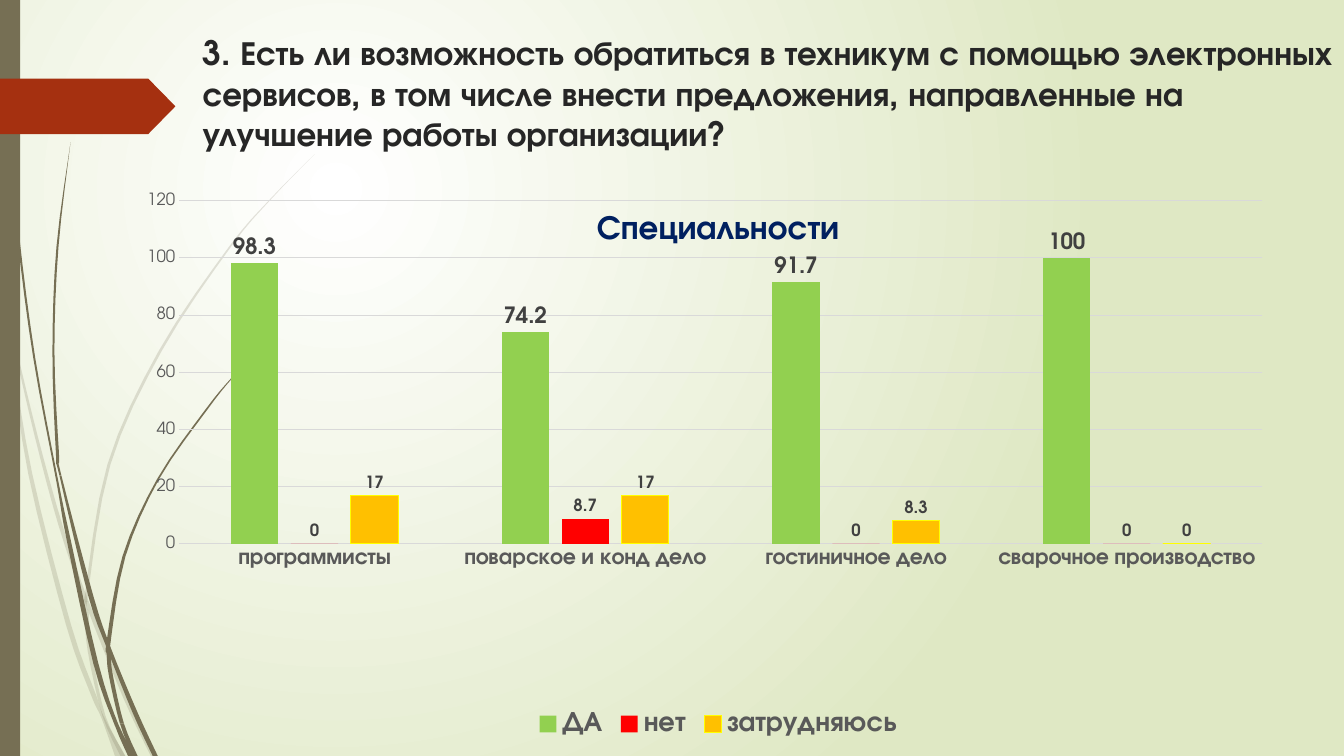
import lxml.etree
import pptx
import pptx.chart.data
import pptx.dml.color
import pptx.enum.chart
import pptx.enum.shapes
import pptx.enum.text
import pptx.oxml
import pptx.oxml.ns
import pptx.util

Inches, Pt = pptx.util.Inches, pptx.util.Pt
qn = pptx.oxml.ns.qn
FONT = "TeX Gyre Adventor"
COLORS = {
    "white": "FFFFFF", "lime": "DFE8C4", "olive": "766F54", "rust": "A53010",
    "title": "262626", "navy": "002060", "axis": "595959", "grid": "D9D9D9",
    "label": "404040", "green": "92D050", "red": "FF0000", "amber": "FFC000",
    "yellow": "FFFF00",
}
STEPS = 4  # samples between two wisp points
# Each wisp: indices of the points where a new blade starts,
# then centre points with width, from tip to root
PALE_WISPS = [
    ((1, 5), [(0, 2.9, 0.05), (0.11, 3.5, 0.02), (0.3, 4.7, 0.04), (0.68, 6.2, 0.05),
              (0.93, 6.9, 0.05), (1.02, 7.12, 0.03), (1.19, 7.5, 0.1)]),
    ((3,), [(0.15, 3.45, 0.02), (0.36, 4.33, 0.03), (0.6, 5.21, 0.04), (0.86, 5.97, 0.04),
            (1.25, 6.93, 0.05), (1.52, 7.5, 0.05)]),
    ((5, 6, 8), [(3.12, 1.53, 0), (2.68, 1.98, 0.01), (2.28, 2.45, 0.02),
                 (1.59, 3.48, 0.03), (1.08, 4.61, 0.03), (0.86, 5.88, 0.03),
                 (0.86, 6.08, 0.04), (0.89, 6.46, 0.04), (1.03, 7.1, 0.03),
                 (1.22, 7.5, 0.05)]),
]
DARK_WISPS = [
    ((4, 7), [(0.04, 0, 0.01), (0.07, 1.1, 0.01), (0.18, 2.33, 0.02), (0.34, 3.55, 0.02),
              (0.57, 4.78, 0.02), (0.68, 5.35, 0.04), (0.95, 6.58, 0.05),
              (1.16, 7.2, 0.04), (1.31, 7.5, 0.08)]),
    ((4, 6), [(0.7, 1.41, 0), (0.57, 2.45, 0.02), (0.53, 3.49, 0.02), (0.57, 4.5, 0.03),
              (0.6, 4.72, 0.02), (0.9, 5.91, 0.05), (1.08, 6.43, 0.04),
              (1.34, 7.07, 0.05), (1.54, 7.5, 0.05)]),
    ((5, 6, 8), [(2.6, 3.44, 0), (2.31, 3.74, 0.01), (2.05, 4.06, 0.02),
                 (1.57, 4.75, 0.02), (1.23, 5.52, 0.03), (1.08, 6.35, 0.04),
                 (1.08, 6.5, 0.04), (1.1, 6.7, 0.04), (1.21, 7.18, 0.04),
                 (1.34, 7.5, 0.05)]),
]


def rgb(name):
    return pptx.dml.color.RGBColor.from_string(COLORS[name])


def style_font(font, size, color, bold=False):
    font.name, font.size, font.bold = FONT, Pt(size), bold
    font.color.rgb = rgb(color)


def paint(shape, color):
    shape.shadow.inherit = False
    shape.fill.solid()
    shape.fill.fore_color.rgb = rgb(color)
    shape.line.fill.background()


def set_background(s):
    """Circular gradient centred in the upper left quarter."""
    s.background.fill.gradient()
    grad = s.background._cSld.find(".//" + qn("a:gradFill"))
    stops = "".join(
        f'<a:gs pos="{pos}"><a:srgbClr val="{COLORS[name]}"/></a:gs>'
        for pos, name in ((0, "white"), (100000, "lime")))
    grad.getparent().replace(grad, pptx.oxml.parse_xml(
        f'<a:gradFill {pptx.oxml.ns.nsdecls("a")} rotWithShape="1">'
        f'<a:gsLst>{stops}</a:gsLst><a:path path="circle">'
        '<a:fillToRect l="50000" t="50000" r="100000" b="100000"/></a:path></a:gradFill>'))


def smooth(points):
    """Catmull-Rom samples through the points."""
    padded = [points[0], *points, points[-1]]
    samples = []
    for a, b, c, d in zip(padded, padded[1:], padded[2:], padded[3:]):
        for i in range(STEPS):
            t = i / STEPS
            samples.append([
                (2 * q + (r - p) * t + (2 * p - 5 * q + 4 * r - u) * t ** 2
                 + (3 * q - p - 3 * r + u) * t ** 3) / 2
                for p, q, r, u in zip(a, b, c, d)])
    return samples + [points[-1]]


def add_blade(s, samples, opacity):
    outline = [(x - w / 2, y) for x, y, w in samples]
    outline += [(x + w / 2, y) for x, y, w in reversed(samples)]
    outline = [(Inches(max(x, 0)), Inches(y)) for x, y in outline]
    builder = s.shapes.build_freeform(*outline[0])
    builder.add_line_segments(outline[1:], close=True)
    blade = builder.convert_to_shape()
    paint(blade, "olive")
    if opacity < 100:
        color = blade.element.spPr.find(".//" + qn("a:srgbClr"))
        lxml.etree.SubElement(color, qn("a:alpha"), val=str(opacity * 1000))


def add_wisps(s, wisps, opacity=100):
    for cuts, points in wisps:
        samples = smooth(points)
        ends = [0, *cuts, len(points) - 1]
        for first, last in zip(ends, ends[1:]):
            add_blade(s, samples[first * STEPS:last * STEPS + 1], opacity)


def add_block(s, kind, left, top, width, height, color):
    shape = s.shapes.add_shape(kind, Inches(left), Inches(top), Inches(width), Inches(height))
    paint(shape, color)
    return shape


def set_title(s, text):
    title = s.shapes.title
    title.left, title.top = Inches(1.91), Inches(0.27)
    title.width, title.height = Inches(11.53), Inches(1.4)
    tf = title.text_frame
    tf.text = text
    tf.word_wrap = True
    tf.auto_size = pptx.enum.text.MSO_AUTO_SIZE.NONE
    tf.vertical_anchor = pptx.enum.text.MSO_ANCHOR.TOP
    p = tf.paragraphs[0]
    p.alignment = pptx.enum.text.PP_ALIGN.LEFT
    p.line_spacing = 1.0
    p.space_before = Pt(0)
    style_font(p.font, 24, "title", True)


def set_layout(parent, index, **values):
    """Manual chart layout; index is where the element goes when missing."""
    layout = parent.find(qn("c:layout"))
    if layout is None:
        layout = parent.makeelement(qn("c:layout"))
        parent.insert(index, layout)
    manual = lxml.etree.SubElement(layout, qn("c:manualLayout"))
    for name, value in values.items():
        lxml.etree.SubElement(manual, qn("c:" + name), val=str(value))


def format_axes(chart):
    none = pptx.enum.chart.XL_TICK_MARK.NONE
    cat, val = chart.category_axis, chart.value_axis
    for axis, size, bold in ((cat, 16, True), (val, 12, False)):
        axis.major_tick_mark = axis.minor_tick_mark = none
        style_font(axis.tick_labels.font, size, "axis", bold)
    val.minimum_scale, val.maximum_scale, val.major_unit = 0, 120, 20
    val.format.line.fill.background()
    for line in (cat.format.line, val.major_gridlines.format.line):
        line.color.rgb = rgb("grid")
        line.width = Pt(0.75)


def format_series(series, color, label_size):
    series.format.fill.solid()
    series.format.fill.fore_color.rgb = rgb(color)
    labels = series.data_labels
    labels.show_value = True
    labels.position = pptx.enum.chart.XL_LABEL_POSITION.OUTSIDE_END
    style_font(labels.font, label_size, "label", True)


def add_answers_chart(s):
    data = pptx.chart.data.CategoryChartData()
    data.categories = ["программисты", "поварское и конд дело",
                       "гостиничное дело", "сварочное производство"]
    data.add_series("ДА", (98.3, 74.2, 91.7, 100))
    data.add_series("нет", (0, 8.7, 0, 0))
    data.add_series("затрудняюсь", (17, 17, 8.3, 0))
    chart = s.shapes.add_chart(
        pptx.enum.chart.XL_CHART_TYPE.COLUMN_CLUSTERED,
        Inches(1.46), Inches(1.86), Inches(11.32), Inches(5.51), data).chart
    chart.font.name, chart.font.size = FONT, Pt(10)

    tf = chart.chart_title.text_frame
    tf.text = "Специальности"
    style_font(tf.paragraphs[0].font, 24, "navy", True)
    set_layout(chart.element.find(".//" + qn("c:title")), 1,
               xMode="edge", yMode="edge", x=0.388, y=0.03)
    set_layout(chart.element.find(".//" + qn("c:plotArea")), 0, layoutTarget="inner",
               xMode="edge", yMode="edge", x=0.027, y=0.024, w=0.95, h=0.618)

    plot = chart.plots[0]
    plot.gap_width, plot.overlap, plot.vary_by_categories = 219, -27, False
    for series, color, size in zip(plot.series, ("green", "red", "amber"), (16, 12, 12)):
        format_series(series, color, size)
    unsure = plot.series[2].format.line
    unsure.color.rgb = rgb("yellow")
    unsure.width = Pt(0.75)

    format_axes(chart)
    chart.has_legend = True
    chart.legend.position = pptx.enum.chart.XL_LEGEND_POSITION.BOTTOM
    chart.legend.include_in_layout = False
    style_font(chart.legend.font, 20, "axis", True)


def main():
    prs = pptx.Presentation()
    prs.slide_width, prs.slide_height = Inches(13.33), Inches(7.5)
    s = prs.slides.add_slide(prs.slide_layouts[5])
    set_background(s)
    add_wisps(s, PALE_WISPS, opacity=20)
    add_wisps(s, DARK_WISPS)
    kinds = pptx.enum.shapes.MSO_SHAPE
    add_block(s, kinds.RECTANGLE, 0, 0, 0.2, 7.5, "olive")
    arrow = add_block(s, kinds.PENTAGON, 0, 0.78, 1.74, 0.55, "rust")
    arrow.adjustments[0] = 0.49
    set_title(s, "3. Есть ли возможность обратиться в техникум с помощью электронных "
                 "сервисов, в том числе внести предложения, направленные на "
                 "улучшение работы организации?")
    add_answers_chart(s)
    prs.save("out.pptx")


if __name__ == "__main__":
    main()
